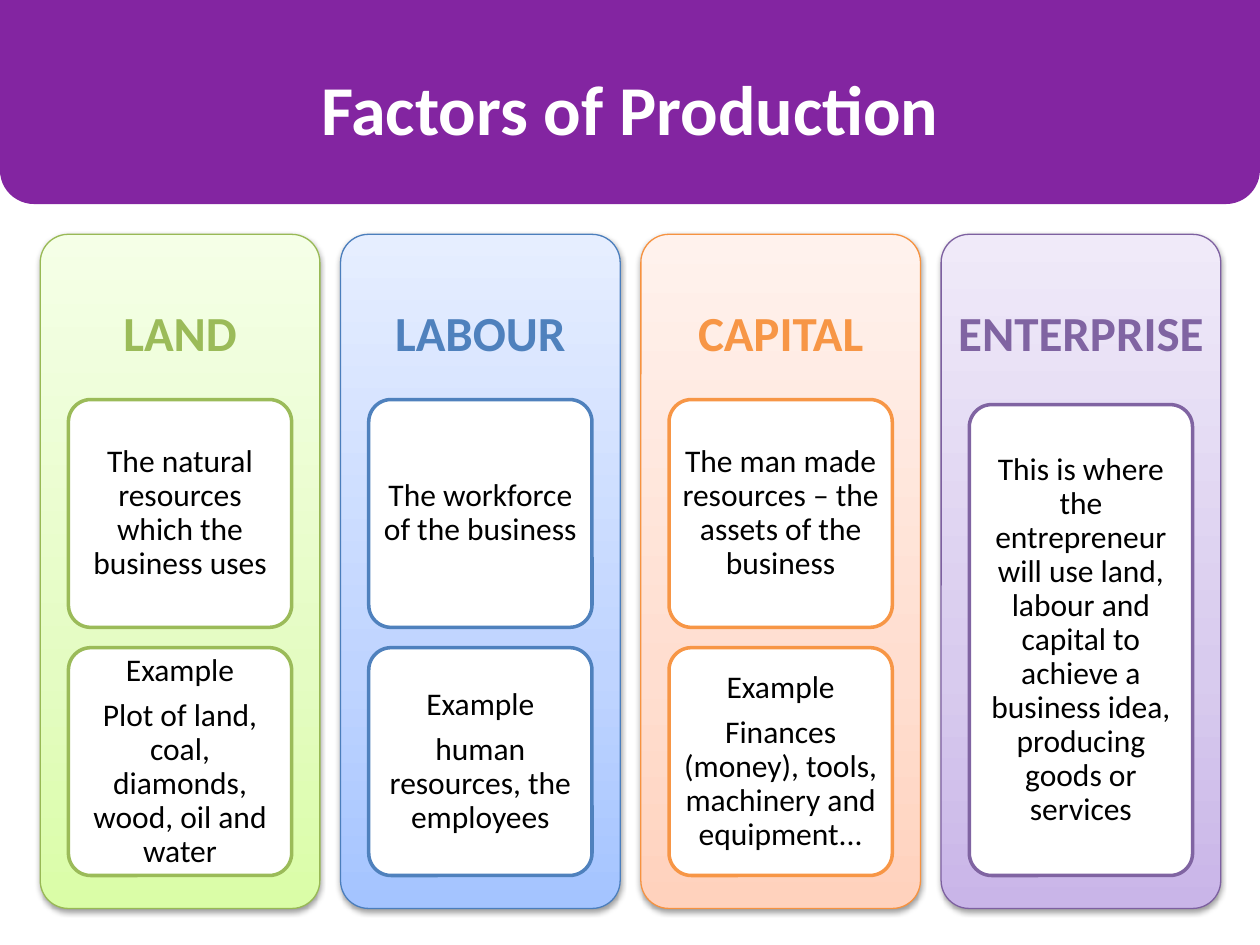
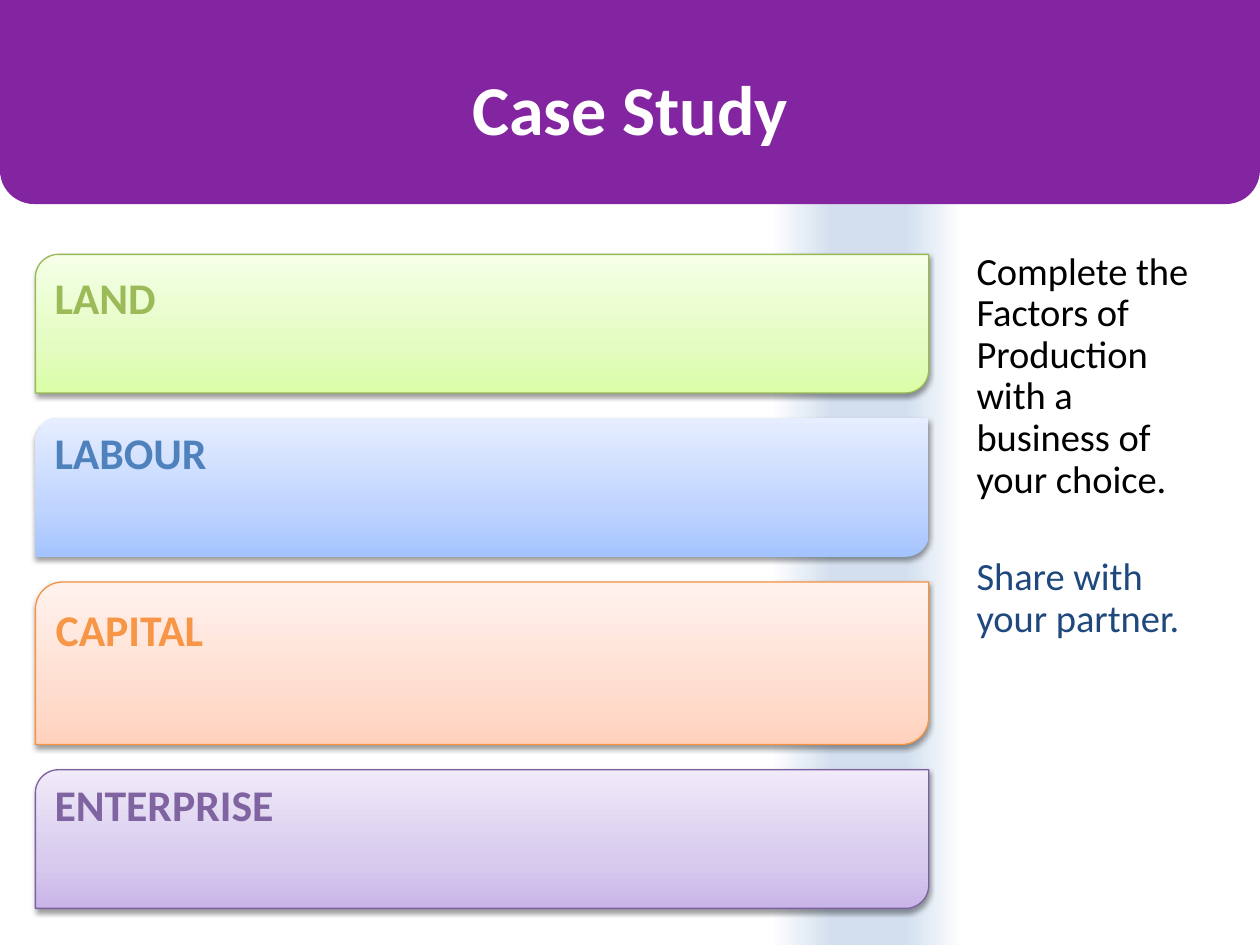
from dataclasses import dataclass

from lxml.etree import SubElement
from pptx import Presentation
from pptx.dml.color import RGBColor
from pptx.enum.shapes import MSO_SHAPE
from pptx.enum.text import MSO_ANCHOR, MSO_AUTO_SIZE, PP_ALIGN
from pptx.oxml.ns import qn
from pptx.util import Pt


@dataclass(frozen=True)
class Theme:
    font: str = "Calibri"
    band: str = "8325A1"
    white: str = "FFFFFF"
    black: str = "000000"
    prompt: str = "1F497D"
    glow: str = "D3DFEE"
    title_size: float = 40
    heading_size: float = 28
    row_size: float = 25
    body_size: float = 22
    card_size: float = 18


@dataclass(frozen=True)
class Factor:
    name: str
    accent: str
    edge: str
    shades: tuple  # bottom, middle, top
    cards: tuple  # each card is a tuple of paragraphs


THEME = Theme()
SLIDE_WIDTH, SLIDE_HEIGHT = 720, 540
BAND_HEIGHT = 116.6
LINE_SPACING = 0.9

FACTORS = (
    Factor("LAND", "9BBB59", "98B955", ("DAFDA7", "E4FCC2", "F5FFE7"), (
        ("The natural resources which the business uses",),
        ("Example", "Plot of land, coal, diamonds, wood, oil and water"))),
    Factor("LABOUR", "4F81BD", "4B7EBC", ("A4C4FF", "BFD4FF", "E6EEFF"), (
        ("The workforce of the business",),
        ("Example", "human resources, the employees"))),
    Factor("CAPITAL", "F79646", "F69240", ("FFD2BD", "FFDED0", "FFF2ED"), (
        ("The man made resources – the assets of the business",),
        ("Example", "Finances (money), tools, machinery and equipment..."))),
    Factor("ENTERPRISE", "8064A2", "7D60A0", ("C9B5E8", "D8CBEE", "F0EAF9"), (
        ("This is where the entrepreneur will use land, labour and capital to "
         "achieve a business idea, producing goods or services",),)),
)


def write(frame, paragraphs, *, size, colors, bold=False, align=PP_ALIGN.CENTER,
          anchor=MSO_ANCHOR.MIDDLE, insets=(7.2, 3.6, 7.2, 3.6), gap=0,
          line_spacing=LINE_SPACING):
    """Fill a text frame; insets run left, top, right, bottom."""
    frame.word_wrap = True
    frame.auto_size = MSO_AUTO_SIZE.NONE
    frame.vertical_anchor = anchor
    (frame.margin_left, frame.margin_top,
     frame.margin_right, frame.margin_bottom) = map(Pt, insets)
    for index, (text, color) in enumerate(zip(paragraphs, colors)):
        paragraph = frame.add_paragraph() if index else frame.paragraphs[0]
        properties = paragraph._p.get_or_add_pPr()
        properties.set("marL", "0")
        properties.set("indent", "0")
        SubElement(properties, qn("a:buNone"))
        paragraph.alignment = align
        paragraph.line_spacing = line_spacing
        paragraph.space_before = Pt(gap if index else 0)
        run = paragraph.add_run()
        run.text = text
        run.font.name = THEME.font
        run.font.size = Pt(size)
        run.font.bold = bold
        run.font.color.rgb = RGBColor.from_string(color)


def place(shape, left, top, width, height):
    shape.left, shape.top = Pt(left), Pt(top)
    shape.width, shape.height = Pt(width), Pt(height)


def add_box(slide, kind, bounds, fill=None, line=None, line_width=0.75, adjustments=()):
    box = slide.shapes.add_shape(kind, *map(Pt, bounds))
    box.shadow.inherit = False
    for index, value in enumerate(adjustments):
        box.adjustments[index] = value
    if fill:
        box.fill.solid()
        box.fill.fore_color.rgb = RGBColor.from_string(fill)
    if line:
        box.line.color.rgb = RGBColor.from_string(line)
        box.line.width = Pt(line_width)
    else:
        box.line.fill.background()
    return box


def shade(box, stops, angle):
    """Give a box a linear gradient of (percent, colour) stops."""
    box.fill.gradient()
    box.fill.gradient_angle = angle
    stop_list = box._element.spPr.find(".//" + qn("a:gsLst"))
    stop_list.clear()
    for percent, color in stops:
        stop = SubElement(stop_list, qn("a:gs"), pos=str(percent * 1000))
        SubElement(stop, qn("a:srgbClr"), val=color)


def drop_shadow(box):
    effects = box._element.spPr.find(qn("a:effectLst"))
    shadow = SubElement(effects, qn("a:outerShdw"), blurRad=str(Pt(3.1)),
                        dist=str(Pt(1.6)), dir="5400000", rotWithShape="0")
    color = SubElement(shadow, qn("a:srgbClr"), val=THEME.black)
    SubElement(color, qn("a:alpha"), val="38000")


def add_factor_box(slide, kind, bounds, factor, line, adjustments=()):
    box = add_box(slide, kind, bounds, line=line, adjustments=adjustments)
    shade(box, zip((0, 35, 100), factor.shades), 90)
    drop_shadow(box)
    return box


def add_title_band(slide, text):
    add_box(slide, MSO_SHAPE.ROUND_2_SAME_RECTANGLE, (0, 0, SLIDE_WIDTH, BAND_HEIGHT),
            fill=THEME.band, adjustments=(0, 0.167))
    title = slide.shapes.title
    slide.shapes._spTree.append(title._element)  # in front of the band
    place(title, 0, 33.8, SLIDE_WIDTH, 55.4)
    write(title.text_frame, [text], size=THEME.title_size, colors=[THEME.white],
          bold=True, anchor=MSO_ANCHOR.TOP, line_spacing=1)


def add_factor_column(slide, factor, left):
    width, card_width, card_gap, cards_bottom = 159.8, 127.6, 11.6, 500.3
    panel = add_factor_box(slide, MSO_SHAPE.ROUNDED_RECTANGLE, (left, 133.9, width, 385.2),
                           factor, factor.edge, adjustments=[0.1])
    write(panel.text_frame, [factor.name], size=THEME.heading_size,
          colors=[factor.accent], bold=True, insets=(3.6, 4, 3.6, 273))

    count = len(factor.cards)
    top = 228.3 if count > 1 else 231.2
    height = (cards_bottom - top - card_gap * (count - 1)) / count
    for index, paragraphs in enumerate(factor.cards):
        card = add_box(slide, MSO_SHAPE.ROUNDED_RECTANGLE,
                       (left + (width - card_width) / 2, top + index * (height + card_gap),
                        card_width, height),
                       fill=THEME.white, line=factor.accent, line_width=2, adjustments=[0.1])
        write(card.text_frame, paragraphs, size=THEME.card_size,
              colors=[THEME.black] * len(paragraphs), insets=(3.6, 2.9, 3.6, 2.9), gap=6.5)


def build_factors(presentation):
    slide = presentation.slides.add_slide(presentation.slide_layouts[5])
    add_title_band(slide, "Factors of Production")
    for index, factor in enumerate(FACTORS):
        add_factor_column(slide, factor, 23 + index * 171.6)


def build_case_study(presentation):
    slide = presentation.slides.add_slide(presentation.slide_layouts[1])
    glow = add_box(slide, MSO_SHAPE.RECTANGLE,
                   (440.6, 113.8, 109.4, SLIDE_HEIGHT - 113.8))
    shade(glow, ((0, THEME.white), (32, THEME.glow), (70, THEME.glow), (100, THEME.white)), 0)
    add_title_band(slide, "Case Study")

    top, row_gap = 145.4, 14.4
    row_heights = (79.2, 79.2, 92.9, 79.2)
    label_insets = (9, 4, 10.5, 4)
    for factor, height, inset in zip(FACTORS, row_heights, label_insets):
        edge = None if factor.name == "LABOUR" else factor.edge
        row = add_factor_box(slide, MSO_SHAPE.ROUND_2_DIAG_RECTANGLE,
                             (20.2, top, 510.5, height), factor, edge)
        write(row.text_frame, [factor.name], size=THEME.row_size, colors=[factor.accent],
              bold=True, align=PP_ALIGN.LEFT, anchor=MSO_ANCHOR.TOP,
              insets=(7.2, inset, 7.2, 0))
        top += height + row_gap

    task = slide.placeholders[1]
    place(task, 550.8, 140.4, 146.9, 373)
    write(task.text_frame,
          ["Complete the Factors of Production with a business of your choice.",
           "Share with your partner."],
          size=THEME.body_size, colors=[THEME.black, THEME.prompt],
          align=PP_ALIGN.LEFT, anchor=MSO_ANCHOR.TOP, gap=32)


def main():
    presentation = Presentation()
    presentation.slide_width, presentation.slide_height = Pt(SLIDE_WIDTH), Pt(SLIDE_HEIGHT)
    build_factors(presentation)
    build_case_study(presentation)
    presentation.save("out.pptx")


if __name__ == "__main__":
    main()
